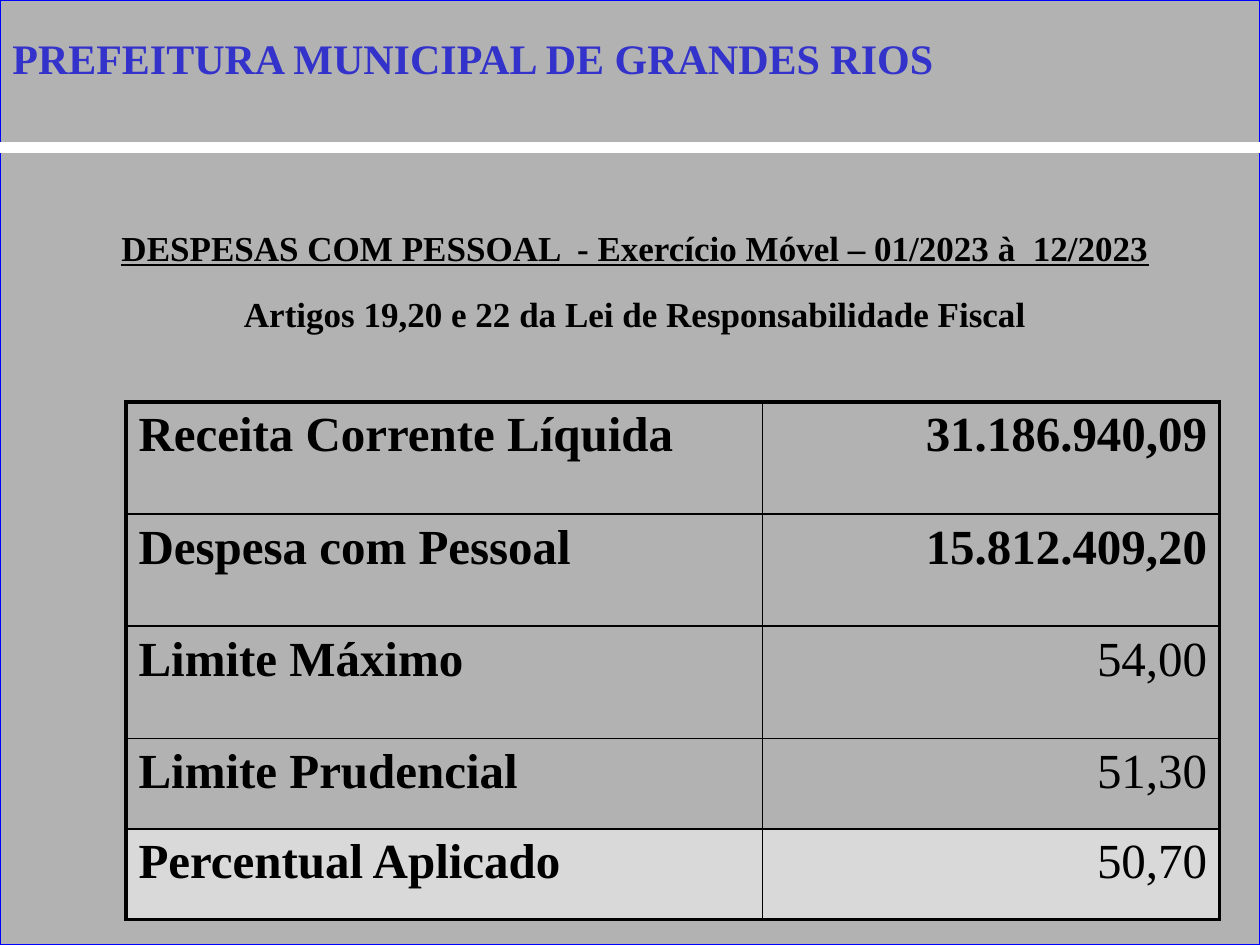
from lxml.etree import SubElement
from pptx import Presentation
from pptx.dml.color import RGBColor
from pptx.enum.shapes import MSO_CONNECTOR, MSO_SHAPE
from pptx.enum.text import PP_ALIGN
from pptx.oxml import parse_xml
from pptx.oxml.ns import qn
from pptx.util import Inches, Pt

COLORS = {
    "background": "B2B2B2",
    "frame": "0000FF",
    "rule": "FFFFFF",
    "title": "3333CC",
    "shadow": "808080",
    "text": "000000",
    "highlight": "D9D9D9",
}
FONT = "Times New Roman"
DRAWING = "http://schemas.openxmlformats.org/drawingml/2006/main"
HEADINGS = [
    ("DESPESAS COM PESSOAL  - Exercício Móvel – 01/2023 à  12/2023", True),
    ("Artigos 19,20 e 22 da Lei de Responsabilidade Fiscal", False),
]
ROWS = [
    ("Receita Corrente Líquida", "31.186.940,09", True, 0.89),
    ("Despesa com Pessoal", "15.812.409,20", True, 0.89),
    ("Limite Máximo", "54,00", False, 0.89),
    ("Limite Prudencial", "51,30", False, 0.72),
    ("Percentual Aplicado", "50,70", False, 0.72),
]
COLUMN_WIDTHS = (5.05, 3.63)


def color(name):
    """Return the named colour as an RGBColor."""
    return RGBColor.from_string(COLORS[name])


def write_text(paragraph, text, size, fill="text", bold=True, underline=False,
               align=PP_ALIGN.LEFT, spacing=None, before=0):
    """Write formatted text into a paragraph and return its run."""
    paragraph.alignment = align
    paragraph.space_before = Pt(before)
    if spacing:
        paragraph.line_spacing = spacing
    run = paragraph.add_run()
    run.text = text
    font = run.font
    font.name, font.size, font.bold, font.underline = FONT, Pt(size), bold, underline
    font.color.rgb = color(fill)
    return run


def add_text_box(slide, left, top, width, height):
    """Add a wrapping text box and return its text frame."""
    shape = slide.shapes.add_textbox(Inches(left), Inches(top), Inches(width), Inches(height))
    shape.text_frame.word_wrap = True
    return shape.text_frame


def add_background(slide):
    """Add the framed panel that covers the slide."""
    shape = slide.shapes.add_shape(MSO_SHAPE.RECTANGLE, 0, 0, Inches(10), Inches(7.5))
    shape.shadow.inherit = False
    shape.fill.solid()
    shape.fill.fore_color.rgb = color("background")
    shape.line.color.rgb = color("frame")
    shape.line.width = Pt(0.75)


def add_rule(slide):
    """Add the horizontal rule below the title."""
    line = slide.shapes.add_connector(
        MSO_CONNECTOR.STRAIGHT, 0, Inches(1.17), Inches(10), Inches(1.17))
    line.line.color.rgb = color("rule")
    line.line.width = Pt(6)
    SubElement(line._element.spPr, qn("a:effectLst"))


def add_text_shadow(run):
    """Give a run a sharp shadow to the lower right."""
    effect = parse_xml(
        f'<a:effectLst xmlns:a="{DRAWING}"><a:outerShdw dist="35921" dir="2700000">'
        f'<a:srgbClr val="{COLORS["shadow"]}"/></a:outerShdw></a:effectLst>')
    run.font._element.find(qn("a:solidFill")).addnext(effect)


def add_title(slide):
    """Add the shadowed title."""
    frame = add_text_box(slide, 0, 0.21, 9.49, 0.5)
    run = write_text(frame.paragraphs[0], "PREFEITURA MUNICIPAL DE GRANDES RIOS", 24,
                     fill="title", before=2)
    add_text_shadow(run)


def add_headings(slide):
    """Add the two centred heading lines."""
    frame = add_text_box(slide, 0.58, 1.58, 8.92, 5.11)
    for index, (text, underline) in enumerate(HEADINGS):
        paragraph = frame.add_paragraph() if index else frame.paragraphs[0]
        write_text(paragraph, text, 20, underline=underline,
                   align=PP_ALIGN.CENTER, spacing=1.5, before=2)


def set_borders(cell, outer_sides):
    """Draw thick borders on the outer sides and thin ones elsewhere."""
    properties = cell._tc.get_or_add_tcPr()
    for side in "LRTB":
        width = Pt(2.25 if side in outer_sides else 1)
        properties.append(parse_xml(
            f'<a:ln{side} xmlns:a="{DRAWING}" w="{width}"><a:solidFill>'
            f'<a:srgbClr val="{COLORS["text"]}"/></a:solidFill></a:ln{side}>'))


def add_spending_table(slide):
    """Add the table of revenue, spending and limits."""
    table = slide.shapes.add_table(
        len(ROWS), 2, Inches(1), Inches(3.19), Inches(sum(COLUMN_WIDTHS)),
        Inches(sum(row[3] for row in ROWS))).table
    table.first_row = table.horz_banding = False
    for column, width in zip(table.columns, COLUMN_WIDTHS):
        column.width = Inches(width)
    last = len(ROWS) - 1
    for index, (label, value, bold_value, height) in enumerate(ROWS):
        table.rows[index].height = Inches(height)
        row_sides = {0: "T", last: "B"}.get(index, "")
        label_cell, value_cell = table.cell(index, 0), table.cell(index, 1)
        write_text(label_cell.text_frame.paragraphs[0], label, 28)
        write_text(value_cell.text_frame.paragraphs[0], value, 28,
                   bold=bold_value, align=PP_ALIGN.RIGHT)
        for cell, side in ((label_cell, "L"), (value_cell, "R")):
            set_borders(cell, row_sides + side)
            if index == last:
                cell.fill.solid()
                cell.fill.fore_color.rgb = color("highlight")
            else:
                cell.fill.background()


def main():
    """Build the slide and save the presentation."""
    presentation = Presentation()
    presentation.slide_width = Inches(10)
    presentation.slide_height = Inches(7.5)
    slide = presentation.slides.add_slide(presentation.slide_layouts[6])
    add_background(slide)
    add_rule(slide)
    add_headings(slide)
    add_spending_table(slide)
    add_title(slide)
    presentation.save("out.pptx")


if __name__ == "__main__":
    main()
